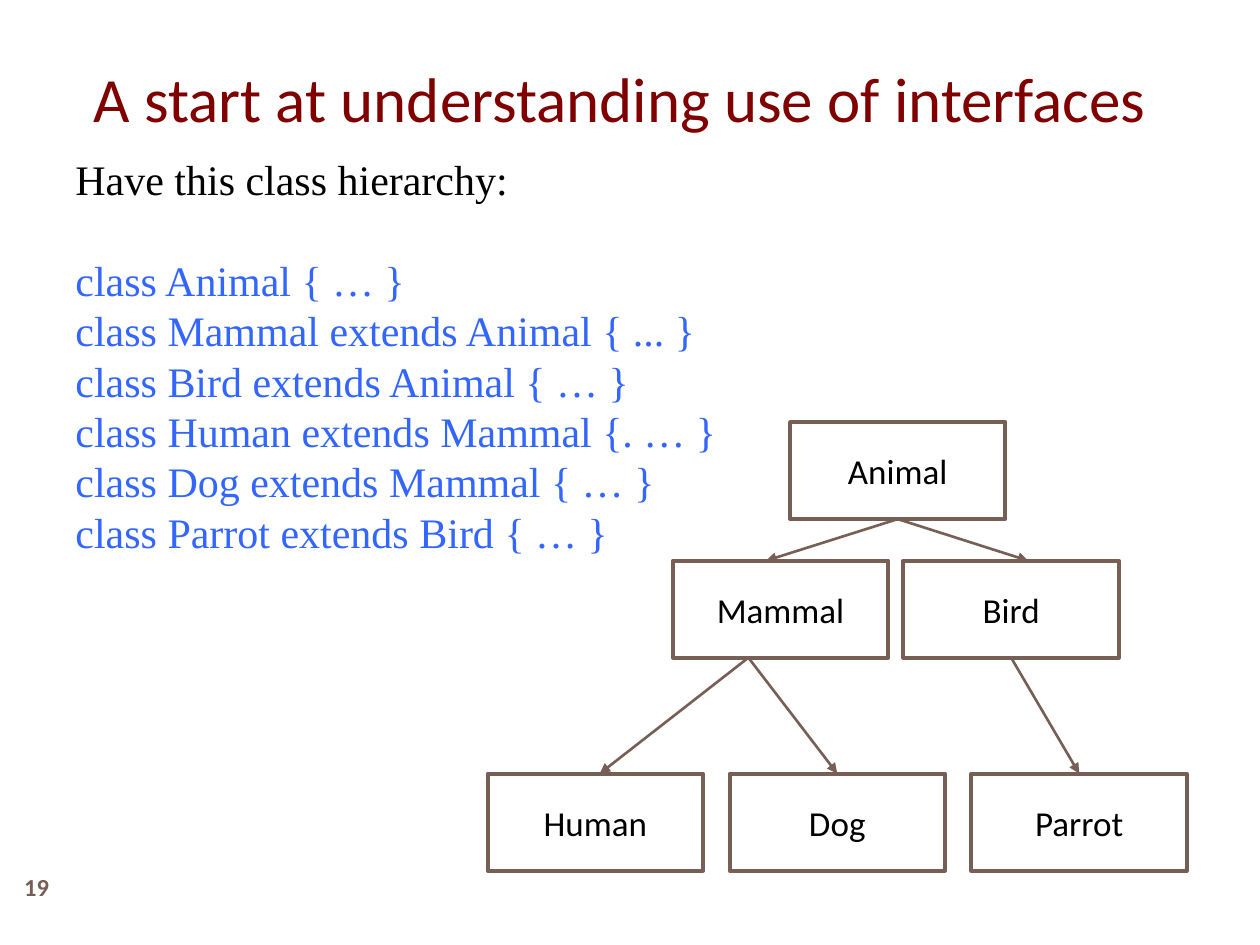
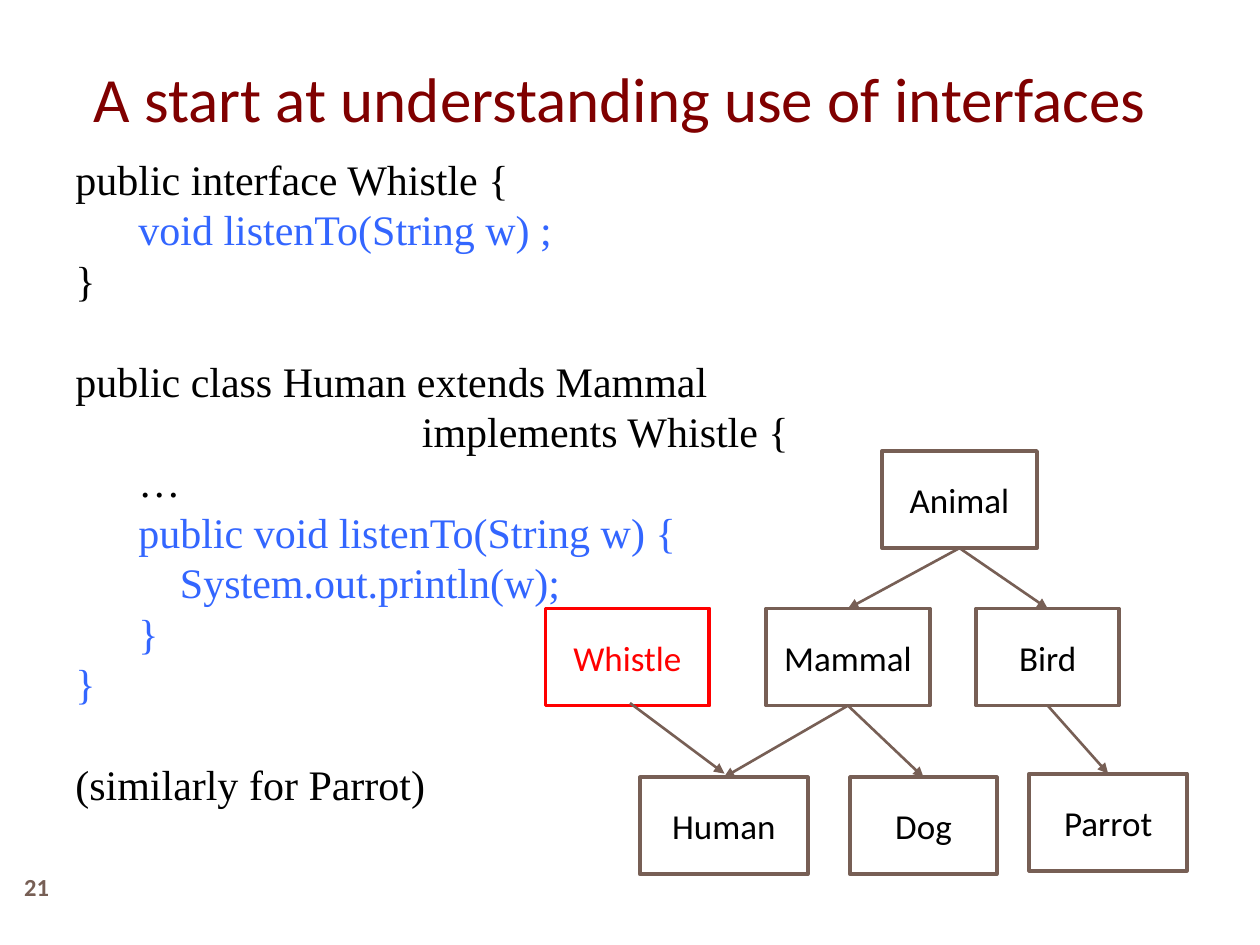
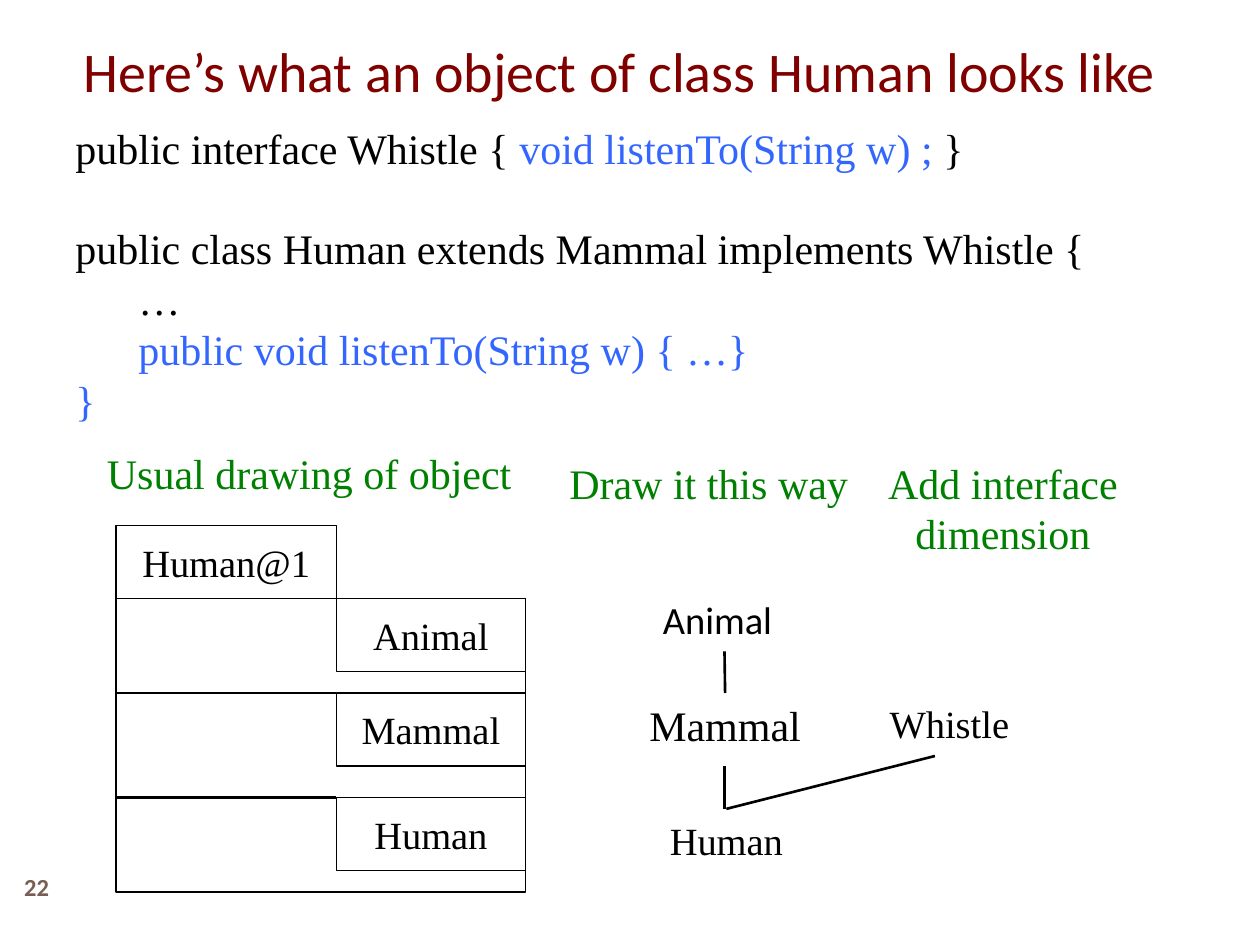
"""Build three slides on class hierarchies and interfaces."""
from lxml import etree
from pptx import Presentation
from pptx import util as u
from pptx.dml.color import RGBColor
from pptx.enum import shapes, text
from pptx.oxml.ns import qn

PX = 9144
SANS, SERIF = "Calibri", "Times New Roman"
BLACK, BLUE, GREEN, RED = "000000", "3366FF", "008000", "FF0000"
BROWN, MAROON = "775F55", "800000"
LINE_HEIGHT = 1.2
INDENT = 50
CODE_SIZE, LABEL_SIZE = 24, 22
LEFT, CENTER = text.PP_ALIGN.LEFT, text.PP_ALIGN.CENTER
TOP, MIDDLE, BOTTOM = (text.MSO_ANCHOR.TOP, text.MSO_ANCHOR.MIDDLE,
                       text.MSO_ANCHOR.BOTTOM)


def px(n):
    """Turn pixels into EMU."""
    return u.Emu(n * PX)


def rgb(value):
    """Turn a hex string into a colour."""
    return RGBColor.from_string(value)


def style_run(r, size, font, color, bold=False):
    """Format one run."""
    r.font.size, r.font.name, r.font.bold = u.Pt(size), font, bold
    r.font.color.rgb = rgb(color)


def style_paragraph(p, size, font, align):
    """Align a paragraph and set the line height of serif text."""
    p.alignment = align
    if font == SERIF:
        p.line_spacing = u.Pt(round(size * LINE_HEIGHT, 2))


def set_frame(sp, anchor, inset):
    """Set wrapping, anchor and margins of a shape's text."""
    tf = sp.text_frame
    tf.word_wrap, tf.vertical_anchor = True, anchor
    tf.margin_left = tf.margin_right = px(10)
    tf.margin_top = tf.margin_bottom = px(inset)
    return tf


def fill_text(sp, words, size, font, color, align=CENTER, anchor=MIDDLE,
              inset=10, bold=False):
    """Write one formatted paragraph into a shape."""
    p = set_frame(sp, anchor, inset).paragraphs[0]
    p.text = words
    style_paragraph(p, size, font, align)
    style_run(p.runs[0], size, font, color, bold)


def add_label(s, at, words, size, font, color, **layout):
    """Add a text box with one paragraph."""
    sp = s.shapes.add_textbox(*map(px, at))
    fill_text(sp, words, size, font, color, **layout)
    return sp


def add_heading(s, at, words, align=LEFT):
    """Add a green heading above a drawing."""
    add_label(s, at, words, CODE_SIZE, SERIF, GREEN,
              align=align, anchor=TOP, inset=5)


def add_code(s, at, lines):
    """Add lines of (indent, *(text, colour)); None leaves a gap."""
    tf = set_frame(s.shapes.add_textbox(*map(px, at)), TOP, 5)
    p, gap = tf.paragraphs[0], False
    for i, line in enumerate(lines):
        if line is None:
            gap = True
            continue
        if i:
            p = tf.add_paragraph()
        indent, *runs = line
        style_paragraph(p, CODE_SIZE, SERIF, LEFT)
        if gap:
            p.space_before = u.Pt(CODE_SIZE * LINE_HEIGHT)
        if indent:
            p._p.get_or_add_pPr().set("marL", str(px(indent)))
        for words, color in runs:
            r = p.add_run()
            r.text = words
            style_run(r, CODE_SIZE, SERIF, color)
        gap = False


def add_rect(s, at, color, weight):
    """Add an outlined, unfilled rectangle."""
    sp = s.shapes.add_shape(shapes.MSO_SHAPE.RECTANGLE, *map(px, at))
    sp.shadow.inherit = False
    sp.fill.background()
    sp.line.color.rgb, sp.line.width = rgb(color), u.Pt(weight)
    return sp


def add_class(s, at, name, color=BLACK, border=BROWN):
    """Add a class box of the hierarchy."""
    sp = add_rect(s, at, border, 2.25)
    fill_text(sp, name, 20, SANS, color)
    return sp


def add_part(s, at, name):
    """Add a named cell of the object drawing."""
    fill_text(add_rect(s, at, BLACK, 0.79), name, LABEL_SIZE, SERIF, BLACK)


def add_line(s, start, end, color=BLACK, arrow=False):
    """Join points, or the bottom of one shape to the top of another."""
    points = [e if isinstance(e, tuple) else (0, 0) for e in (start, end)]
    c = s.shapes.add_connector(shapes.MSO_CONNECTOR.STRAIGHT,
                               *(px(n) for point in points for n in point))
    if not isinstance(start, tuple):
        c.begin_connect(start, 2)
    if not isinstance(end, tuple):
        c.end_connect(end, 0)
    c.line.color.rgb, c.line.width = rgb(color), u.Pt(1.5)
    props = c._element.spPr
    if arrow:
        etree.SubElement(props.find(qn("a:ln")), qn("a:tailEnd"),
                         type="triangle")
    etree.SubElement(props, qn("a:effectLst"))


def add_arrows(s, pairs):
    """Add the brown arrows of a hierarchy."""
    for start, end in pairs:
        add_line(s, start, end, BROWN, arrow=True)


def add_slide(prs, number, title, size=36, height=75):
    """Add a blank slide with its title and number."""
    s = prs.slides.add_slide(prs.slide_layouts[6])
    add_label(s, (42, 42, 900, height), title, size, SANS, MAROON,
              anchor=BOTTOM)
    add_label(s, (0, 683, 58, 42), str(number), 14, SANS, BROWN, bold=True)
    return s


def build_hierarchy(prs, title):
    """Show the class hierarchy."""
    s = add_slide(prs, 19, title)
    declarations = ["class Animal { … }",
                    "class Mammal extends Animal { ... }",
                    "class Bird extends Animal { … }",
                    "class Human extends Mammal {. … }",
                    "class Dog extends Mammal { … }",
                    "class Parrot extends Bird { … }"]
    add_code(s, (50, 117, 875, 333),
             [(0, ("Have this class hierarchy:", BLACK)), None]
             + [(0, (d, BLUE)) for d in declarations])
    places = {"Animal": (627, 335), "Mammal": (534, 445), "Bird": (717, 445),
              "Human": (387, 614), "Dog": (579, 614), "Parrot": (771, 614)}
    box = {name: add_class(s, (*place, 171, 77), name)
           for name, place in places.items()}
    add_arrows(s, [(box["Animal"], (608, 445)), (box["Animal"], (816, 445)),
                   ((594, 522), (476, 614)), ((594, 522), box["Dog"]),
                   (box["Bird"], box["Parrot"])])


def build_interface(prs, title):
    """Show the interface beside the hierarchy."""
    s = add_slide(prs, 21, title)
    add_code(s, (50, 117, 875, 576), [
        (0, ("public interface Whistle {", BLACK)),
        (INDENT, ("void listenTo(String w) ;", BLUE)),
        (0, ("}", BLACK)),
        None,
        (0, ("public class Human extends Mammal", BLACK)),
        (275, ("implements Whistle {", BLACK)),
        (INDENT, ("…", BLACK)),
        (INDENT, ("public void listenTo(String w) {", BLUE)),
        (83, ("System.out.println(w);", BLUE)),
        (INDENT, ("}", BLUE)),
        (0, ("}", BLUE)),
        None,
        (0, ("(similarly for Parrot)", BLACK))])
    places = {"Animal": (700, 358, 123), "Mammal": (608, 483, 130),
              "Bird": (775, 483, 113), "Human": (508, 617, 133),
              "Dog": (675, 617, 116), "Parrot": (817, 614, 125)}
    box = {name: add_class(s, (*place, 77), name)
           for name, place in places.items()}
    add_class(s, (433, 483, 130, 77), "Whistle", RED, RED)
    links = [("Animal", "Mammal"), ("Animal", "Bird"), ("Mammal", "Human"),
             ("Mammal", "Dog"), ("Bird", "Parrot")]
    add_arrows(s, [(box[a], box[b]) for a, b in links]
               + [((500, 558), (575, 614))])


def build_object(prs):
    """Show two drawings of one object."""
    s = add_slide(prs, 22, "Here’s what an object of class Human looks like",
                  32, 50)
    add_code(s, (50, 92, 875, 252), [
        (0, ("public interface Whistle { ", BLACK),
         ("void listenTo(String w) ;", BLUE), (" }", BLACK)),
        None,
        (0, ("public class Human extends Mammal implements Whistle {", BLACK)),
        (INDENT, ("…", BLACK)),
        (INDENT, ("public void listenTo(String w) { …}", BLUE)),
        (0, ("}", BLUE))])

    add_heading(s, (75, 350, 346, 50), "Usual drawing of object")
    add_rect(s, (92, 475, 325, 233), BLACK, 0.79)
    add_part(s, (92, 417, 175, 58), "Human@1")
    for name, top in (("Animal", 475), ("Mammal", 550), ("Human", 633)):
        add_part(s, (267, top, 150, 58), name)
        if name != "Animal":
            add_line(s, (92, top), (267, top))

    add_heading(s, (442, 358, 244, 50), "Draw it this way")
    add_label(s, (508, 475, 123, 32), "Animal", LABEL_SIZE, SANS, BLACK)
    mammal = add_label(s, (492, 550, 167, 50), "Mammal", CODE_SIZE, SERIF,
                       BLACK)
    human = add_label(s, (510, 642, 133, 50), "Human", LABEL_SIZE, SERIF,
                      BLACK)
    add_line(s, (575, 517), mammal)
    add_line(s, (575, 608), (575, 642))

    add_heading(s, (675, 358, 242, 91), "Add interface dimension", CENTER)
    add_label(s, (692, 558, 123, 32), "Whistle", LABEL_SIZE, SERIF, BLACK)
    add_line(s, (742, 600), human)


def main():
    """Build and save the presentation."""
    prs = Presentation()
    prs.slide_width, prs.slide_height = px(1000), px(750)
    title = "A start at understanding use of interfaces"
    build_hierarchy(prs, title)
    build_interface(prs, title)
    build_object(prs)
    prs.save("out.pptx")


if __name__ == "__main__":
    main()
